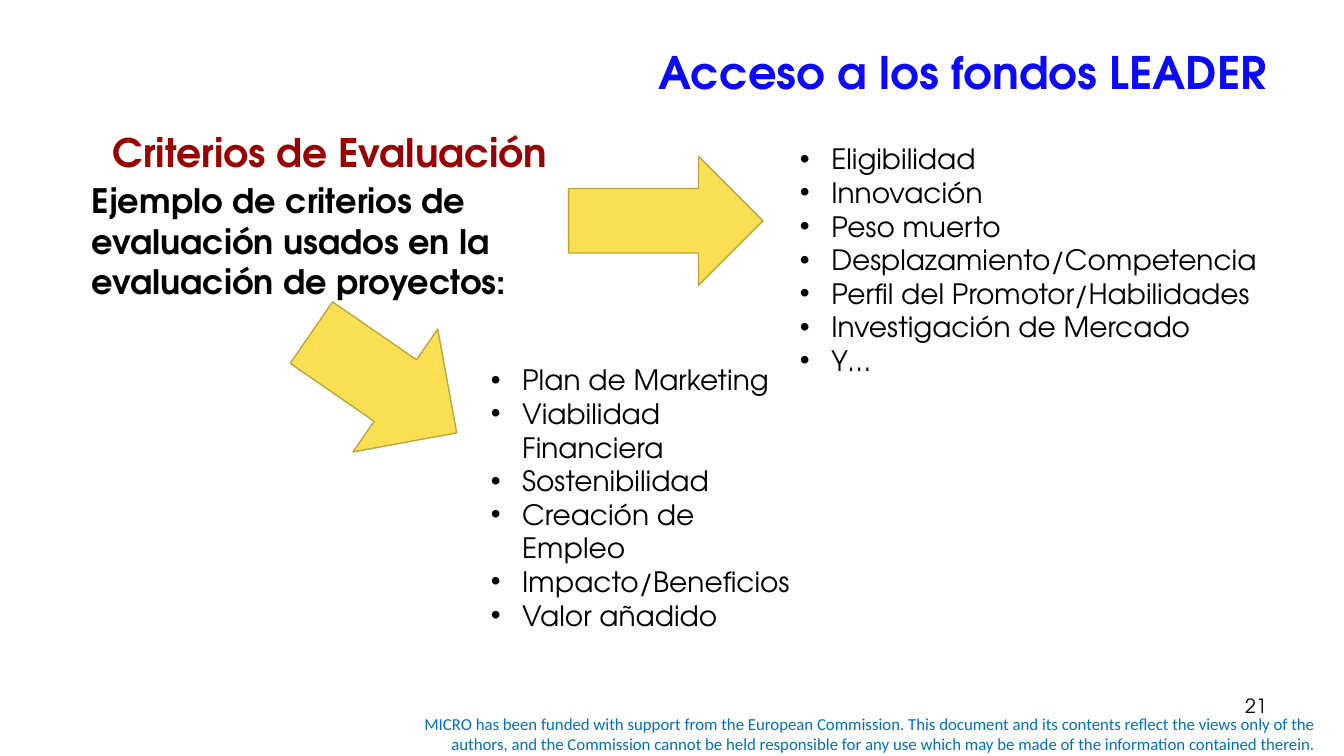
from pptx import Presentation
from pptx.dml.color import RGBColor
from pptx.enum.shapes import MSO_SHAPE as Preset
from pptx.enum.text import MSO_ANCHOR as Anchor, PP_ALIGN as Align
from pptx.oxml.ns import qn
from pptx.util import Cm, Pt
from lxml.etree import SubElement

BLUE = RGBColor(0x0B, 0x0A, 0xFD)
RED = RGBColor(0x99, 0x00, 0x00)
BLACK = RGBColor(0x00, 0x00, 0x00)
SKY = RGBColor(0x00, 0x70, 0xC0)
YELLOW = RGBColor(0xFB, 0xDF, 0x53)
OLIVE = RGBColor(0xBA, 0xA5, 0x3D)

FONT = "TeX Gyre Adventor"
BULLET_INDENT = Cm(0.79)

FIRST_CRITERIA = [
    "Eligibilidad",
    "Innovación",
    "Peso muerto",
    "Desplazamiento/Competencia",
    "Perfil del Promotor/Habilidades",
    "Investigación de Mercado",
    "Y…",
]
SECOND_CRITERIA = [
    "Plan de Marketing",
    "Viabilidad Financiera",
    "Sostenibilidad",
    "Creación de Empleo",
    "Impacto/Beneficios",
    "Valor añadido",
]
FOOTER = (
    "MICRO has been funded with support from the European Commission. "
    "This document and its contents reflect the views only of the authors, "
    "and the Commission cannot be held responsible for any use which may be "
    "made of the information contained therein."
)


def set_format(target, values):
    """Set each attribute named in values on the target."""
    for name, value in values.items():
        setattr(target, name, value)


def add_bullet(paragraph):
    """Give the paragraph a hanging round bullet."""
    properties = paragraph._p.get_or_add_pPr()
    properties.set("marL", str(BULLET_INDENT))
    properties.set("indent", str(-BULLET_INDENT))
    SubElement(properties, qn("a:buFont"), typeface="Arial")
    SubElement(properties, qn("a:buChar"), char="•")


def add_text(slide, box, lines, size, color=BLACK, bold=False, name=FONT,
             align=Align.LEFT, anchor=Anchor.TOP, wrap=True, bullets=False):
    """Add a text box with one paragraph for each line."""
    shape = slide.shapes.add_textbox(*map(Cm, box))
    frame = shape.text_frame
    set_format(frame, {"word_wrap": wrap, "vertical_anchor": anchor})
    frame.text = "\n".join(lines)
    for paragraph in frame.paragraphs:
        paragraph.alignment = align
        if bullets:
            add_bullet(paragraph)
        font = paragraph.runs[0].font
        set_format(font, {"name": name, "size": Pt(size), "bold": bold})
        font.color.rgb = color


def add_arrow(slide, preset, box, rotation=0):
    """Add a yellow block arrow."""
    shape = slide.shapes.add_shape(preset, *map(Cm, box))
    shape.rotation = rotation
    shape.shadow.inherit = False
    shape.fill.solid()
    shape.fill.fore_color.rgb = YELLOW
    shape.line.color.rgb = OLIVE
    shape.line.width = Pt(1)


def main():
    """Build the slide and save it."""
    presentation = Presentation()
    set_format(presentation, {"slide_width": Cm(33.87), "slide_height": Cm(19.05)})
    slide = presentation.slides.add_slide(presentation.slide_layouts[6])

    add_text(slide, (9.53, 17.86, 23.88, 1.27), [FOOTER], 12, SKY,
             name="Calibri", align=Align.RIGHT, anchor=Anchor.MIDDLE)
    add_text(slide, (24.28, 17.35, 7.9, 1.32), ["21"], 14, align=Align.RIGHT)
    add_text(slide, (1.7, 0.76, 30.48, 2.08), ["Acceso a los fondos LEADER"],
             32, BLUE, bold=True, align=Align.RIGHT, anchor=Anchor.MIDDLE)
    add_text(slide, (2.06, 4.42, 12.27, 4.11),
             ["Ejemplo de criterios de evaluación usados en la evaluación de proyectos:"],
             24, bold=True)
    add_arrow(slide, Preset.RIGHT_ARROW, (14.33, 3.94, 4.9, 3.25))
    add_arrow(slide, Preset.DOWN_ARROW, (7.8, 7.42, 3.76, 4.45), rotation=304.6)
    add_text(slide, (19.91, 3.45, 12.42, 6.25), FIRST_CRITERIA, 20, bullets=True)
    add_text(slide, (12.12, 9.02, 8.18, 7.09), SECOND_CRITERIA, 20, bullets=True)
    add_text(slide, (2.59, 3.12, 11.63, 1.45), ["Criterios de Evaluación"],
             28, RED, bold=True, wrap=False)

    presentation.save("out.pptx")


if __name__ == "__main__":
    main()
